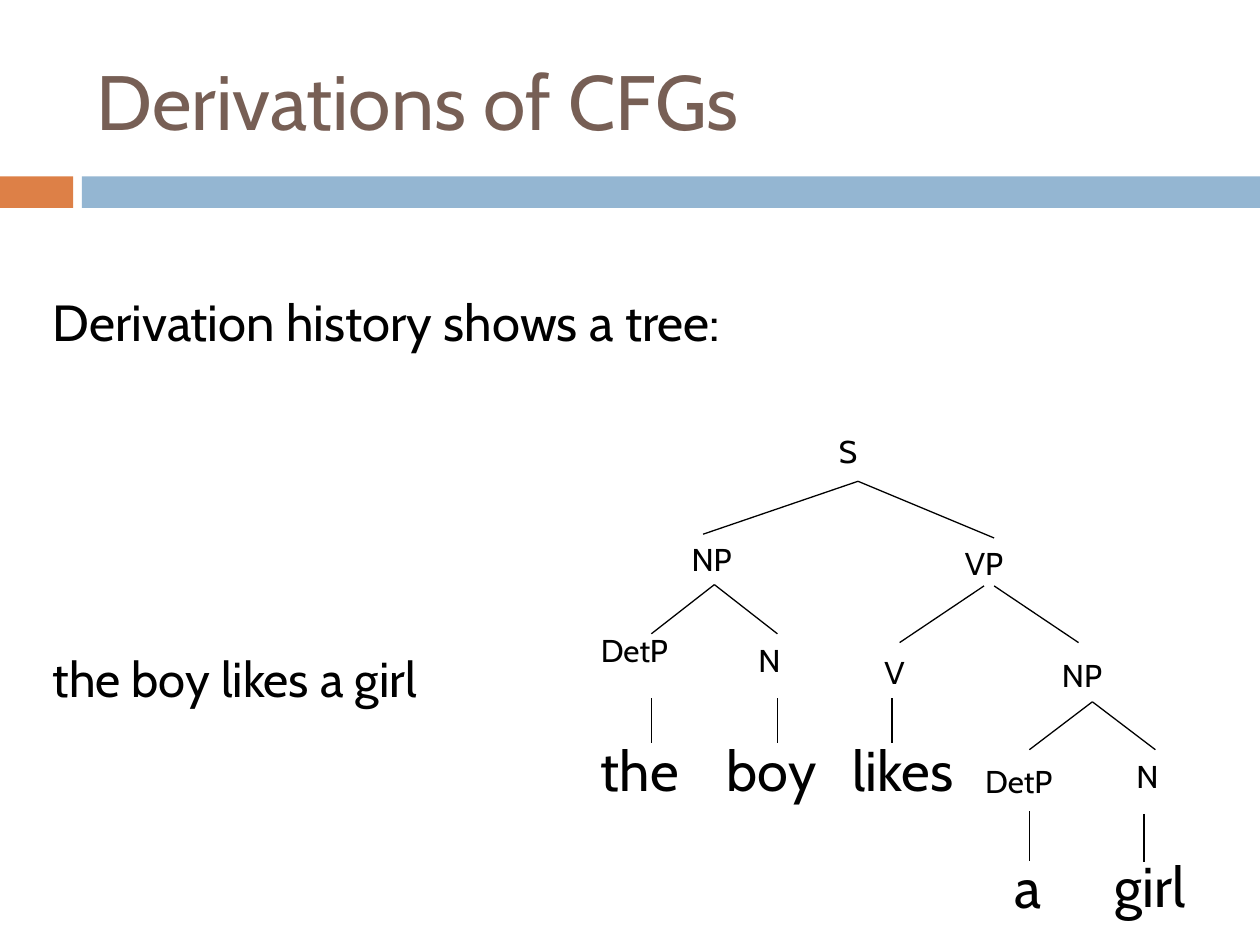
from lxml.etree import SubElement
from pptx import Presentation
from pptx.dml.color import RGBColor
from pptx.enum.shapes import MSO_CONNECTOR, MSO_SHAPE
from pptx.enum.text import MSO_ANCHOR
from pptx.oxml.ns import qn
from pptx.util import Inches, Pt


def color(hex_code):
    return RGBColor.from_string(hex_code)


class TreeSlide:
    font = "Cabin"
    ink = "000000"
    line_width = 0.75

    def __init__(self, slide):
        self.shapes = slide.shapes

    def bar(self, left, top, width, height, fill):
        bar = self.shapes.add_shape(
            MSO_SHAPE.RECTANGLE, Inches(left), Inches(top), Inches(width), Inches(height)
        )
        bar.shadow.inherit = False
        bar.fill.solid()
        bar.fill.fore_color.rgb = color(fill)
        bar.line.fill.background()

    def text(self, words, left, top, width, height, size, ink=None,
             anchor=MSO_ANCHOR.TOP, inset=0.05):
        box = self.shapes.add_textbox(
            Inches(left), Inches(top), Inches(width), Inches(height)
        )
        frame = box.text_frame
        frame.word_wrap = True
        frame.vertical_anchor = anchor
        frame.margin_top = Inches(inset)
        paragraph = frame.paragraphs[0]
        paragraph.text = words
        paragraph.font.name = self.font
        paragraph.font.size = Pt(size)
        paragraph.font.color.rgb = color(ink or self.ink)

    def branch(self, x1, y1, x2, y2):
        branch = self.shapes.add_connector(
            MSO_CONNECTOR.STRAIGHT, Inches(x1), Inches(y1), Inches(x2), Inches(y2)
        )
        branch.line.color.rgb = color(self.ink)
        branch.line.width = Pt(self.line_width)
        SubElement(branch._element.spPr, qn("a:effectLst"))

    def category(self, symbol, left, top, width):
        self.text(symbol, left, top, width, 0.5, 18)

    def word(self, word, left, top, width):
        self.text(word, left, top, width, 0.63, 32)


def main():
    deck = Presentation()
    deck.slide_width, deck.slide_height = Inches(10), Inches(7.5)
    page = TreeSlide(deck.slides.add_slide(deck.slide_layouts[6]))

    page.bar(0, 1.4, 0.58, 0.25, "DD8047")
    page.bar(0.65, 1.4, 9.35, 0.25, "94B6D2")
    page.text("Derivations of CFGs", 0.67, 0.25, 8.92, 1.08, 44,
              ink="775F55", anchor=MSO_ANCHOR.MIDDLE)
    page.text("Derivation history shows a tree:", 0.32, 1.67, 9.27, 1.92, 29, inset=0.64)
    page.text("the boy likes a girl", 0.32, 5.1, 3.35, 0.57, 28)

    categories = [
        ("S", 6.56, 3.38, 0.39),
        ("NP", 5.39, 4.24, 0.61),
        ("VP", 7.56, 4.27, 0.59),
        ("DetP", 4.67, 4.96, 0.9),
        ("N", 5.92, 5.04, 0.42),
        ("V", 6.92, 5.13, 0.4),
        ("NP", 8.33, 5.16, 0.61),
        ("DetP", 7.72, 6, 0.9),
        ("N", 8.92, 5.96, 0.42),
    ]
    for category in categories:
        page.category(*category)

    words = [
        ("the", 4.67, 5.79, 0.83),
        ("boy", 5.67, 5.79, 0.91),
        ("likes", 6.67, 5.79, 1.06),
        ("a", 7.95, 6.72, 0.43),
        ("girl", 8.75, 6.71, 0.81),
    ]
    for word in words:
        page.word(*word)

    page.branch(6.81, 3.82, 5.58, 4.24)
    page.branch(6.81, 3.82, 7.89, 4.27)
    page.branch(7.81, 4.65, 7.14, 5.1)
    page.branch(7.89, 4.65, 8.56, 5.1)

    for apex, top, bottom in [(5.67, 4.64, 5.03), (8.67, 5.57, 5.95)]:
        for side in (-0.5, 0.5):
            page.branch(apex, top, apex + side, bottom)

    stems = [(x, 5.54, 5.9) for x in (5.17, 6.17, 7.08)]
    stems += [(8.17, 6.44, 6.83), (9.08, 6.46, 6.84)]
    for x, top, bottom in stems:
        page.branch(x, top, x, bottom)

    deck.save("out.pptx")


if __name__ == "__main__":
    main()
